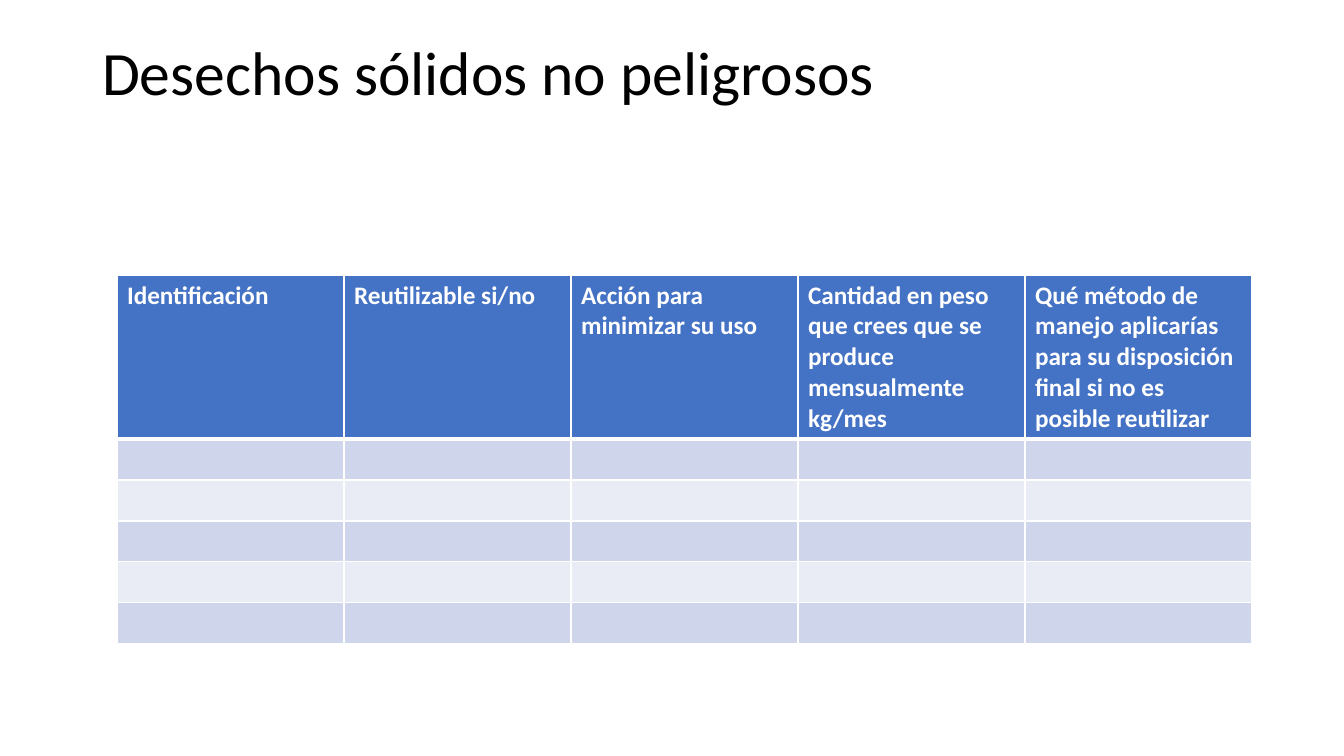
from dataclasses import dataclass

from lxml import etree
from pptx import Presentation
from pptx.dml.color import RGBColor
from pptx.enum.text import MSO_ANCHOR, MSO_AUTO_SIZE, PP_ALIGN
from pptx.oxml.ns import qn
from pptx.util import Emu, Pt

LEFT = PP_ALIGN.LEFT
MIDDLE = MSO_ANCHOR.MIDDLE
NO_AUTOFIT = MSO_AUTO_SIZE.NONE
EMU_PER_PX = 12192000 / 1344
TITLE_ONLY = 5


@dataclass(frozen=True)
class Theme:
    font: str = "Calibri"
    title_size: int = 44
    header_size: int = 18
    ink: str = "000000"
    white: str = "FFFFFF"
    header_fill: str = "4472C4"
    bands: tuple = ("CFD5EA", "E9EBF5")
    thin_line: int = 1
    thick_line: int = 3


THEME = Theme()

HEADERS = (
    "Identificación",
    "Reutilizable si/no",
    "Acción para minimizar su uso",
    "Cantidad en peso que crees que se produce mensualmente kg/mes",
    "Qué método de manejo aplicarías para su disposición final "
    "si no es posible reutilizar",
)
EMPTY_ROWS = 5
COLUMN_WIDTH = 227
HEADER_HEIGHT = 162
ROW_HEIGHT = 41


def px(length):
    return Emu(round(length * EMU_PER_PX))


def format_spans(para, size, color, bold=False):
    for span in para.runs:
        span.font.name = THEME.font
        span.font.size = Pt(size)
        span.font.bold = bold
        span.font.color.rgb = RGBColor.from_string(color)


def set_title(page, text, left, top, width, height):
    title = page.shapes.title
    title.left, title.top = px(left), px(top)
    title.width, title.height = px(width), px(height)
    frame = title.text_frame
    frame.text = text
    frame.word_wrap = True
    frame.auto_size = NO_AUTOFIT
    frame.vertical_anchor = MIDDLE
    para = frame.paragraphs[0]
    para.alignment = LEFT
    para.line_spacing = 0.9
    format_spans(para, THEME.title_size, THEME.ink)


def set_borders(cell, top, bottom):
    properties = cell._tc.get_or_add_tcPr()
    sides = {"L": THEME.thin_line, "R": THEME.thin_line, "T": top, "B": bottom}
    for side, width in sides.items():
        line = etree.SubElement(properties, qn(f"a:ln{side}"), w=str(Pt(width)))
        fill = etree.SubElement(line, qn("a:solidFill"))
        etree.SubElement(fill, qn("a:srgbClr"), val=THEME.white)


def paint_cell(cell, color, top, bottom):
    set_borders(cell, top, bottom)
    cell.fill.solid()
    cell.fill.fore_color.rgb = RGBColor.from_string(color)


def add_waste_table(page, left, top):
    width = COLUMN_WIDTH * len(HEADERS)
    height = HEADER_HEIGHT + ROW_HEIGHT * EMPTY_ROWS
    table = page.shapes.add_table(
        EMPTY_ROWS + 1, len(HEADERS), px(left), px(top), px(width), px(height)
    ).table
    for column in table.columns:
        column.width = px(COLUMN_WIDTH)
    for index, row in enumerate(table.rows):
        row.height = px(ROW_HEIGHT if index else HEADER_HEIGHT)

    # Header row
    for column, text in enumerate(HEADERS):
        cell = table.cell(0, column)
        cell.text = text
        format_spans(cell.text_frame.paragraphs[0], THEME.header_size,
                     THEME.white, bold=True)
        paint_cell(cell, THEME.header_fill, THEME.thin_line, THEME.thick_line)

    # Banded rows left blank for the answers
    for row in range(1, EMPTY_ROWS + 1):
        band = THEME.bands[(row - 1) % len(THEME.bands)]
        top_line = THEME.thick_line if row == 1 else THEME.thin_line
        for column in range(len(HEADERS)):
            paint_cell(table.cell(row, column), band, top_line, THEME.thin_line)


def main():
    deck = Presentation()
    deck.slide_width, deck.slide_height = px(1344), px(756)
    page = deck.slides.add_slide(deck.slide_layouts[TITLE_ONLY])

    # The title ends in a line break, which lifts its only line of words
    set_title(page, "Desechos sólidos no peligrosos\v", 92, 40, 1159, 146)
    add_waste_table(page, 117, 275)
    deck.save("out.pptx")


if __name__ == "__main__":
    main()
